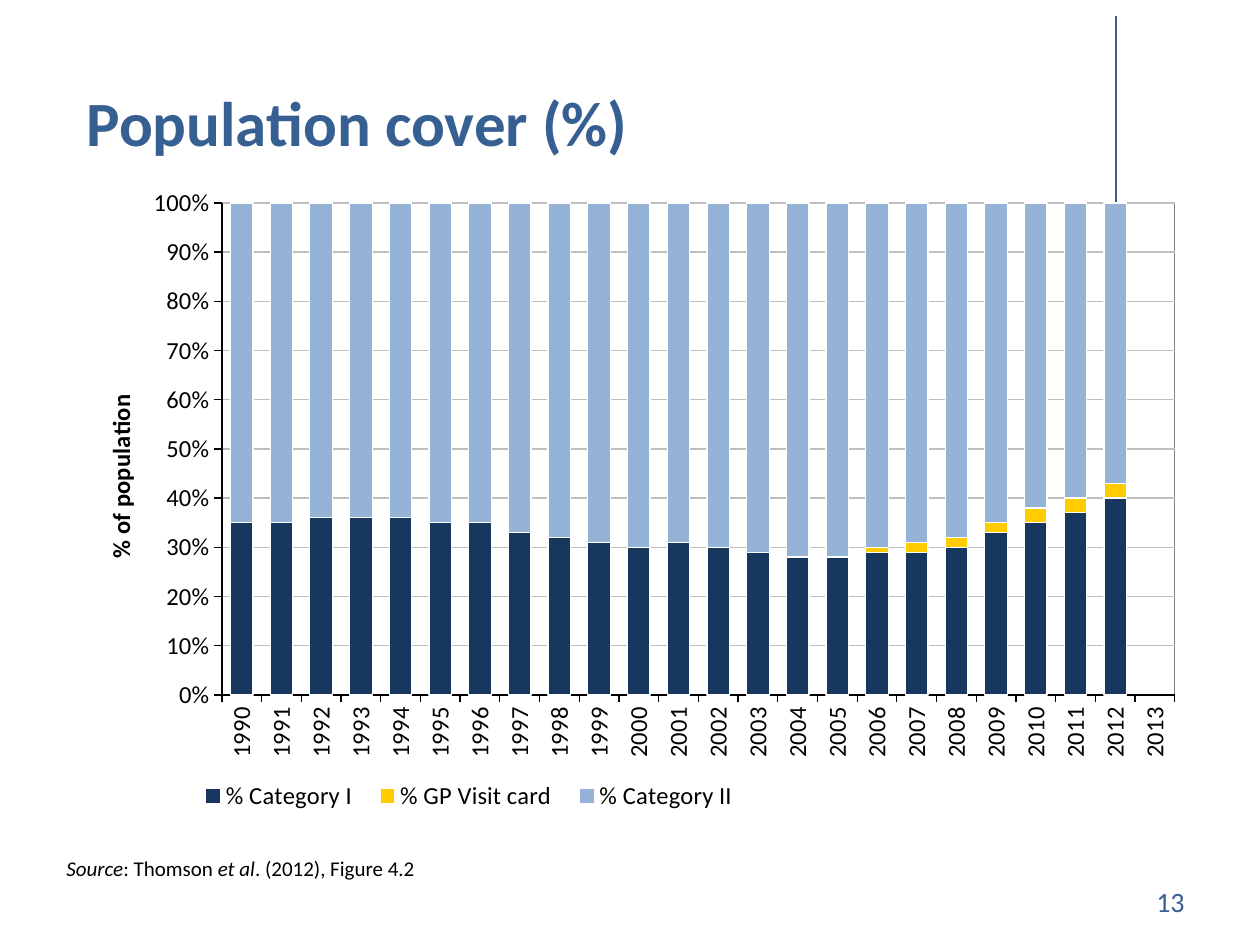
from dataclasses import dataclass
from typing import Optional

import pptx
import pptx.chart.data
import pptx.dml.color
import pptx.enum.chart
import pptx.enum.shapes
import pptx.enum.text
import pptx.oxml
import pptx.oxml.ns
import pptx.util

PX = 914400 / 126
FONT = "Calibri"
COLORS = {"accent": "376092", "text": "000000", "grid": "BFBFBF", "frame": "808080",
          "category_1": "17375E", "gp_visit": "FFCC00", "category_2": "95B3D7",
          "edge": "FFFFFF"}


@dataclass
class Box:
    left: int
    top: int
    width: int
    height: int

    def emu(self) -> list[int]:
        return [px(v) for v in (self.left, self.top, self.width, self.height)]


@dataclass
class CoverSeries:
    name: str
    color: str
    values: list[Optional[int]]


CHART_BOX = Box(64, 175, 1134, 646)
YEARS = [str(year) for year in range(1990, 2014)]
# No figures are reported for 2013; the visit card starts in 2006
COVER = [
    CoverSeries("% Category I", "category_1",
                [35, 35, 36, 36, 36, 35, 35, 33, 32, 31, 30, 31,
                 30, 29, 28, 28, 29, 29, 30, 33, 35, 37, 40, None]),
    CoverSeries("% GP Visit card", "gp_visit",
                [None] * 16 + [1, 2, 2, 2, 3, 3, 3, None]),
    CoverSeries("% Category II", "category_2",
                [65, 65, 64, 64, 64, 65, 65, 67, 68, 69, 70, 69,
                 70, 71, 72, 72, 70, 69, 68, 65, 62, 60, 57, None]),
]


def px(value: int) -> int:
    return round(value * PX)


def rgb(name: str):
    return pptx.dml.color.RGBColor.from_string(COLORS[name])


def style_font(font, size: int, color: str, bold: Optional[bool] = None) -> None:
    font.name, font.size, font.bold = FONT, pptx.util.Pt(size), bold
    font.color.rgb = rgb(color)


def style_line(line, color: str, width: float = 0.75) -> None:
    line.color.rgb = rgb(color)
    line.width = pptx.util.Pt(width)


def place_part(part, box: Box, index: int, inner: bool = False, sized: bool = True) -> None:
    """Give a chart part a fixed place, from slide px to chart fractions."""
    for old in part.findall(pptx.oxml.ns.qn("c:layout")):
        part.remove(old)
    values = {"x": (box.left - CHART_BOX.left) / CHART_BOX.width,
              "y": (box.top - CHART_BOX.top) / CHART_BOX.height}
    if sized:
        values |= {"w": box.width / CHART_BOX.width, "h": box.height / CHART_BOX.height}
    target = '<c:layoutTarget val="inner"/>' if inner else ""
    modes = '<c:xMode val="edge"/><c:yMode val="edge"/>'
    numbers = "".join(f'<c:{key} val="{value:.4f}"/>' for key, value in values.items())
    part.insert(index, pptx.oxml.parse_xml(
        f'<c:layout {pptx.oxml.ns.nsdecls("c")}><c:manualLayout>'
        f"{target}{modes}{numbers}</c:manualLayout></c:layout>"))


def add_label(slide, box: Box, runs: list[tuple[str, bool]], size: int, color: str,
              wrap: bool = True):
    frame = slide.shapes.add_textbox(*box.emu()).text_frame
    frame.word_wrap = wrap
    paragraph = frame.paragraphs[0]
    for text, italic in runs:
        run = paragraph.add_run()
        run.text = text
        if italic:
            run.font.italic = True
    style_font(paragraph.font, size, color)
    return frame


def add_cover_chart(slide) -> None:
    data = pptx.chart.data.CategoryChartData(number_format="0")
    data.categories = YEARS
    for cover in COVER:
        data.add_series(cover.name, cover.values)
    chart = slide.shapes.add_chart(
        pptx.enum.chart.XL_CHART_TYPE.COLUMN_STACKED_100, *CHART_BOX.emu(), data).chart
    style_font(chart.font, 14, "text")
    chart.has_title = False

    # Columns
    plot = chart.plots[0]
    plot.gap_width, plot.overlap, plot.vary_by_categories = 76, 100, False
    for series, cover in zip(plot.series, COVER):
        series.format.fill.solid()
        series.format.fill.fore_color.rgb = rgb(cover.color)
        style_line(series.format.line, "edge")

    # Axes
    years, share = chart.category_axis, chart.value_axis
    for axis in (years, share):
        axis.major_tick_mark = pptx.enum.chart.XL_TICK_MARK.OUTSIDE
        axis.minor_tick_mark = pptx.enum.chart.XL_TICK_MARK.NONE
        style_line(axis.format.line, "text")
        style_font(axis.tick_labels.font, 14, "text")
    years_body = years._element.find(".//" + pptx.oxml.ns.qn("a:bodyPr"))
    years_body.set("rot", "-5400000")
    years_body.set("vert", "horz")
    share.minimum_scale, share.maximum_scale, share.major_unit = 0, 1, 0.1
    share.tick_labels.number_format = "0%"
    share.tick_labels.number_format_is_linked = False
    share.has_major_gridlines = True
    style_line(share.major_gridlines.format.line, "grid")
    caption = share.axis_title.text_frame
    caption.text = "% of population"
    style_font(caption.paragraphs[0].font, 14, "text", bold=True)
    caption._txBody.bodyPr.set("rot", "-5400000")
    caption._txBody.bodyPr.set("vert", "horz")
    place_part(share.axis_title._element, Box(99, 390, 0, 0), 1, sized=False)

    # Legend and plot frame
    chart.has_legend = True
    chart.legend.position = pptx.enum.chart.XL_LEGEND_POSITION.BOTTOM
    chart.legend.include_in_layout = False
    style_font(chart.legend.font, 14, "text")
    place_part(chart.legend._element, Box(186, 782, 566, 34), 1)
    area = chart._chartSpace.chart.plotArea
    place_part(area, Box(222, 203, 953, 492), 0, inner=True)
    area.append(pptx.oxml.parse_xml(
        f'<c:spPr {pptx.oxml.ns.nsdecls("c", "a")}><a:noFill/><a:ln w="9525"><a:solidFill>'
        f'<a:srgbClr val="{COLORS["frame"]}"/></a:solidFill></a:ln></c:spPr>'))


def main() -> None:
    deck = pptx.Presentation()
    deck.slide_width, deck.slide_height = px(1260), px(945)
    slide = deck.slides.add_slide(deck.slide_layouts[5])

    # Vertical rule, partly behind the chart
    rule = slide.shapes.add_connector(
        pptx.enum.shapes.MSO_CONNECTOR.STRAIGHT, px(1116), px(16), px(1116), px(204))
    style_line(rule.line, "accent", 1.5)
    rule._element.spPr.append(
        pptx.oxml.parse_xml(f'<a:effectLst {pptx.oxml.ns.nsdecls("a")}/>'))

    # Title
    title = slide.shapes.title
    title.left, title.top, title.width, title.height = Box(74, 45, 1040, 120).emu()
    title.text_frame.text = "Population cover (%)"
    title.text_frame.vertical_anchor = pptx.enum.text.MSO_ANCHOR.BOTTOM
    heading = title.text_frame.paragraphs[0]
    heading.alignment = pptx.enum.text.PP_ALIGN.LEFT
    style_font(heading.font, 36, "accent", bold=True)

    add_cover_chart(slide)

    # Page number and source
    page = add_label(slide, Box(903, 876, 294, 50), [("13", False)], 16, "accent")
    page.vertical_anchor = pptx.enum.text.MSO_ANCHOR.MIDDLE
    page.paragraphs[0].alignment = pptx.enum.text.PP_ALIGN.RIGHT
    add_label(slide, Box(54, 849, 379, 38),
              [("Source", True), (": Thomson ", False), ("et al", True),
               (". (2012), Figure 4.2", False)], 12, "text", wrap=False)

    deck.save("out.pptx")


if __name__ == "__main__":
    main()
